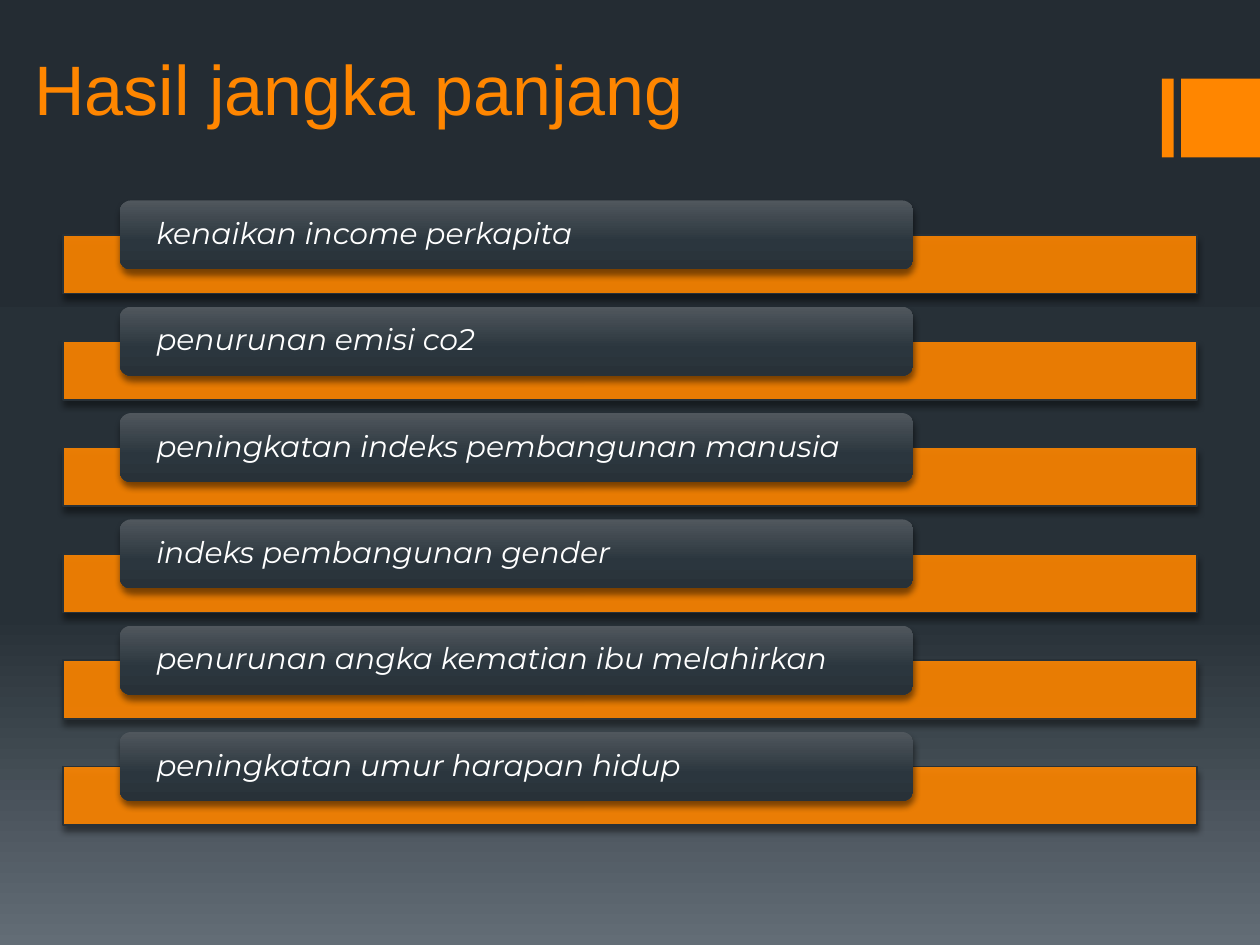
from copy import deepcopy

from lxml import etree
from pptx import Presentation
from pptx.dml.color import RGBColor
from pptx.enum.shapes import MSO_SHAPE
from pptx.enum.text import MSO_ANCHOR, PP_ALIGN
from pptx.oxml.ns import qn
from pptx.util import Pt

RECT = MSO_SHAPE.RECTANGLE
ROUNDED = MSO_SHAPE.ROUNDED_RECTANGLE
BOTTOM = MSO_ANCHOR.BOTTOM
MIDDLE = MSO_ANCHOR.MIDDLE
LEFT = PP_ALIGN.LEFT

ORANGE = RGBColor(0xFF, 0x86, 0x00)
WHITE = RGBColor(0xFF, 0xFF, 0xFF)
OUTLINE = RGBColor(0x28, 0x31, 0x38)
BACKGROUND_STOPS = [
    (0, RGBColor(0x24, 0x2C, 0x33)),
    (0.65, RGBColor(0x27, 0x30, 0x37)),
    (1, RGBColor(0x63, 0x6D, 0x76)),
]
LABEL_STOPS = [
    (0, RGBColor(0x50, 0x57, 0x5D)),
    (0.6, RGBColor(0x2B, 0x36, 0x3E)),
    (1, OUTLINE),
]

RESULTS = [
    "kenaikan income perkapita",
    "penurunan emisi co2",
    "peningkatan indeks pembangunan manusia",
    "indeks pembangunan gender",
    "penurunan angka kematian ibu melahirkan",
    "peningkatan umur harapan hidup",
]


def set_gradient(fill, element, stops):
    """Fill from top to bottom with the given (position, colour) stops."""
    fill.gradient()
    fill.gradient_angle = 270
    gs_list = element.find(".//" + qn("a:gsLst"))
    while len(gs_list) < len(stops):
        gs_list.append(deepcopy(gs_list[-1]))
    for stop, (position, color) in zip(fill.gradient_stops, stops):
        stop.position = position
        stop.color.rgb = color


def add_shadow(sp):
    """Give a shape a soft shadow that falls straight down."""
    effects = sp._element.spPr.find(qn("a:effectLst"))
    shadow = etree.SubElement(
        effects, qn("a:outerShdw"), blurRad=str(Pt(3.8)), dist=str(Pt(3)),
        dir="5400000", rotWithShape="0")
    color = etree.SubElement(shadow, qn("a:srgbClr"), val="000000")
    etree.SubElement(color, qn("a:alpha"), val="48000")


def add_block(s, kind, left, top, width, height):
    """Add a plain orange shape without line or shadow."""
    sp = s.shapes.add_shape(kind, Pt(left), Pt(top), Pt(width), Pt(height))
    sp.shadow.inherit = False
    sp.fill.solid()
    sp.fill.fore_color.rgb = ORANGE
    sp.line.fill.background()
    return sp


def format_text(tf, text, font, size, color):
    """Set one left-aligned paragraph and return it."""
    tf.word_wrap = True
    tf.text = text
    p = tf.paragraphs[0]
    p.alignment = LEFT
    r = p.runs[0]
    r.font.name = font
    r.font.size = Pt(size)
    r.font.color.rgb = color
    return p


def add_title(s, text, left, top, width, height):
    """Place the slide title at the bottom of its box."""
    tf = s.shapes.add_textbox(Pt(left), Pt(top), Pt(width), Pt(height)).text_frame
    tf.vertical_anchor = BOTTOM
    format_text(tf, text, "Arial", 40, ORANGE)


def add_corner_mark(s, left, top, width, height):
    """Place the narrow strip and the square at the right edge."""
    add_block(s, RECT, left, top, 6.75, height)
    add_block(s, RECT, left + width - height, top, height, height)


def add_result(s, text, left, top, width):
    """Place one bar with its label overlapping the top edge."""
    bar = add_block(s, RECT, left, top + 19.75, width, 33.5)
    color = bar.fill._xPr.find(qn("a:solidFill"))[0]
    etree.SubElement(color, qn("a:alpha"), val="90000")
    bar.line.color.rgb = OUTLINE
    bar.line.width = Pt(1)
    add_shadow(bar)

    label = add_block(s, ROUNDED, left + width * 0.05, top, width * 0.7, 39.5)
    set_gradient(label.fill, label._element, LABEL_STOPS)
    add_shadow(label)
    tf = label.text_frame
    tf.vertical_anchor = MIDDLE
    tf.margin_left = tf.margin_right = Pt(19)
    tf.margin_top = tf.margin_bottom = 0
    p = format_text(tf, text, "Montserrat", 17, WHITE)
    p.line_spacing = 0.9
    p.runs[0].font.italic = True


def add_results(s, results, left, top, width, height):
    """Stack the results at equal steps in the given box."""
    step = height / len(results)
    for i, text in enumerate(results):
        add_result(s, text, left, top + i * step, width)


def main():
    """Build and save the slide."""
    prs = Presentation()
    prs.slide_width, prs.slide_height = Pt(720), Pt(540)
    s = prs.slides.add_slide(prs.slide_layouts[6])
    set_gradient(s.background.fill, s._element, BACKGROUND_STOPS)
    add_corner_mark(s, 664, 45, 56, 45)
    add_title(s, "Hasil jangka panjang", 12.5, -12.5, 648, 90)
    add_results(s, RESULTS, 36, 114.5, 648, 364.5)
    prs.save("out.pptx")


if __name__ == "__main__":
    main()
